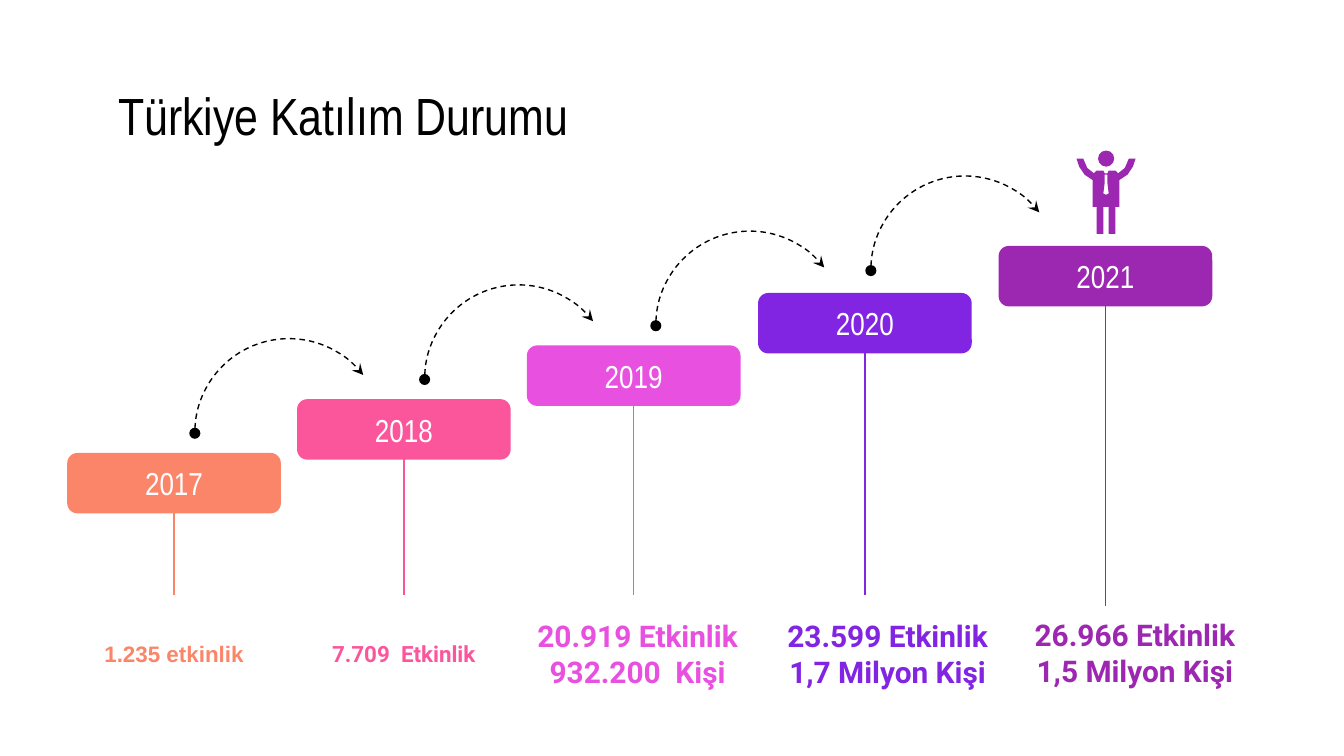
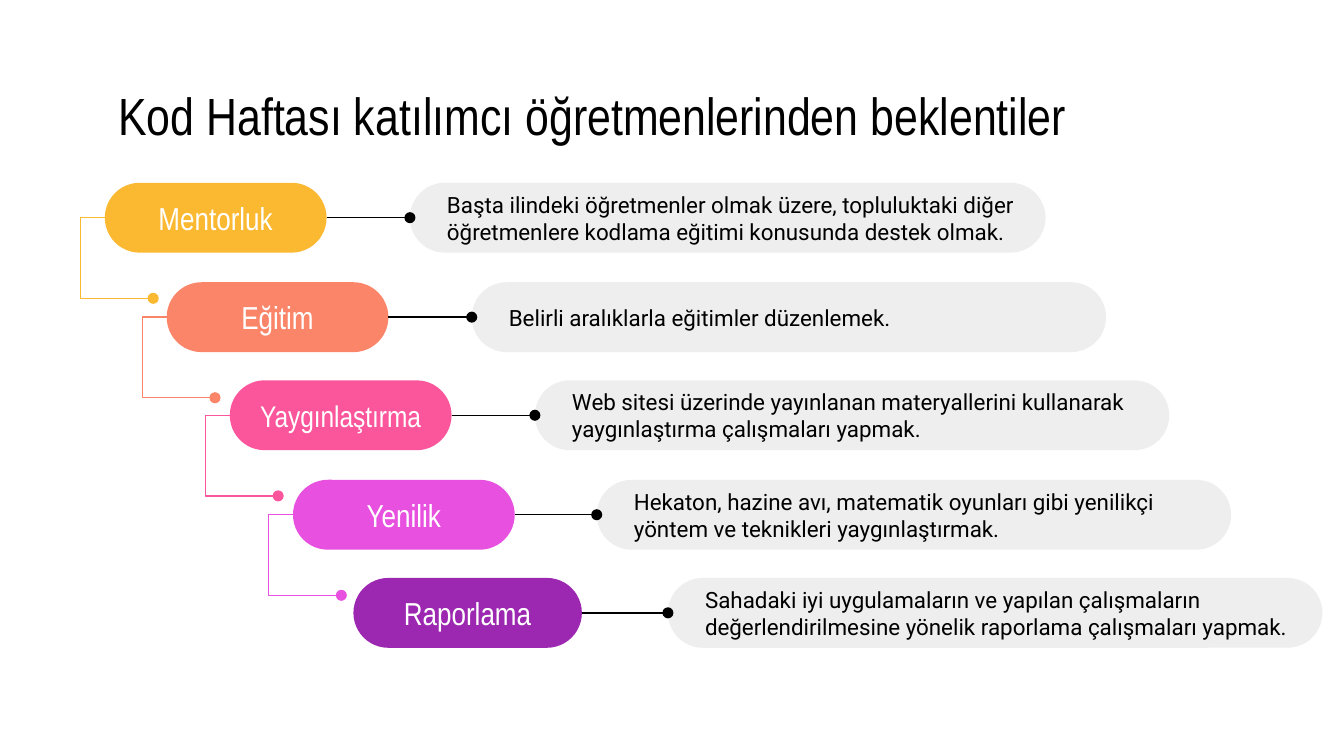
"""Build two slides: participation by year and what is expected of teachers."""
from lxml.etree import SubElement
from pptx import Presentation
from pptx.dml.color import RGBColor
from pptx.enum.dml import MSO_LINE
from pptx.enum.shapes import MSO_CONNECTOR, MSO_SHAPE
from pptx.enum.text import MSO_ANCHOR, MSO_AUTO_SIZE, PP_ALIGN
from pptx.oxml.ns import qn
from pptx.util import Pt

PX = 9144
BLACK = RGBColor(0x00, 0x00, 0x00)
WHITE = RGBColor(0xFF, 0xFF, 0xFF)
GREY = RGBColor(0xEE, 0xEE, 0xEE)
YELLOW = RGBColor(0xFB, 0xB8, 0x31)
CORAL = RGBColor(0xFB, 0x85, 0x69)
ROSE = RGBColor(0xFB, 0x56, 0x9C)
PINK = RGBColor(0xE8, 0x50, 0xE0)
VIOLET = RGBColor(0x82, 0x25, 0xE2)
PURPLE = RGBColor(0x9C, 0x27, 0xB0)
HEADING, BODY = "Arial Narrow", "Roboto"

YEARS_TITLE = "Türkiye Katılım Durumu"
YEARS = [
    {"year": "2017", "at": (50, 337), "color": CORAL, "stem": (CORAL, 443),
     "label": (50, 452, 159, 69), "text": ["1.235 etkinlik"], "font": ("Arial", 12)},
    {"year": "2018", "at": (221, 297), "color": ROSE, "stem": (ROSE, 443),
     "label": (221, 452, 159, 69), "text": ["7.709  Etkinlik"], "font": (BODY, 12)},
    {"year": "2019", "at": (392, 257), "color": PINK, "stem": (PINK, 443),
     "label": (386, 452, 177, 69), "text": ["20.919 Etkinlik", "932.200  Kişi"], "font": (BODY, 16)},
    {"year": "2020", "at": (564, 218), "color": VIOLET, "stem": (VIOLET, 443),
     "label": (564, 452, 193, 69), "text": ["23.599 Etkinlik 1,7 Milyon Kişi"], "font": (BODY, 16)},
    {"year": "2021", "at": (743, 183), "color": PURPLE, "stem": (VIOLET, 451),
     "label": (748, 451, 193, 69), "text": ["26.966 Etkinlik 1,5 Milyon Kişi"], "font": (BODY, 16)},
]
JUMPS = [(145, 252), (316, 212), (488, 172), (648, 131)]
YEAR_W, YEAR_H, JUMP_SIZE = 159, 45, 140

FIGURE_HEAD = (817, 112, 12, 12)
FIGURE_AXIS = 823
HALF_BODY = [(822, 129), (821, 127), (819, 127), (816, 127), (814, 129), (809, 125),
             (806, 118), (801, 118), (803, 124), (807, 130), (813, 134), (813, 154),
             (816, 154), (816, 174), (821, 174), (821, 154)]
HALF_TIE = [(822, 130), (822, 136), (821, 144), (823, 145)]

TASKS_TITLE = "Kod Haftası katılımcı öğretmenlerinden beklentiler"
TASKS = [
    ("Mentorluk", 17, YELLOW, (78, 165), (305, 473),
     "Başta ilindeki öğretmenler olmak üzere, topluluktaki diğer "
     "öğretmenlere kodlama eğitimi konusunda destek olmak."),
    ("Eğitim", 17, CORAL, (124, 165), (351, 472),
     "Belirli aralıklarla eğitimler düzenlemek."),
    ("Yaygınlaştırma", 16, ROSE, (171, 165), (398, 472),
     "Web sitesi üzerinde yayınlanan materyallerini kullanarak "
     "yaygınlaştırma çalışmaları yapmak."),
    ("Yenilik", 17, PINK, (218, 165), (444, 472),
     "Hekaton, hazine avı, matematik oyunları gibi yenilikçi "
     "yöntem ve teknikleri yaygınlaştırmak."),
    ("Raporlama", 17, PURPLE, (263, 170), (497, 487),
     "Sahadaki iyi uygulamaların ve yapılan çalışmaların "
     "değerlendirilmesine yönelik raporlama çalışmaları yapmak."),
]
TASK_TOP, TASK_STEP, TASK_H = 136, 73.6, 52


def px(*lengths):
    return [round(n * PX) for n in lengths]


def write(sp, lines, font, size, color, align=PP_ALIGN.CENTER, bold=False, left=10):
    tf = sp.text_frame
    tf.word_wrap = True
    tf.auto_size = MSO_AUTO_SIZE.NONE
    tf.vertical_anchor = MSO_ANCHOR.MIDDLE
    tf.margin_left, tf.margin_top, tf.margin_right, tf.margin_bottom = px(left, 10, 10, 10)
    for i, line in enumerate(lines):
        p = tf.add_paragraph() if i else tf.paragraphs[0]
        p.alignment = align
        r = p.add_run()
        r.text = line
        r.font.name, r.font.size, r.font.bold = font, Pt(size), bold
        r.font.color.rgb = color


def add_filled(s, kind, box, color, radius=None):
    sp = s.shapes.add_shape(kind, *px(*box))
    paint(sp, color)
    if radius is not None:
        sp.adjustments[0] = radius
    return sp


def paint(sp, color):
    sp.shadow.inherit = False
    sp.fill.solid()
    sp.fill.fore_color.rgb = color
    sp.line.fill.background()


def draw_line(sp, color, head=None, tail=None, dash=None):
    sp.line.color.rgb = color
    sp.line.width = Pt(0.75)
    if dash:
        sp.line.dash_style = dash
    ln = sp.element.spPr.get_or_add_ln()
    for tag, end in (("a:headEnd", head), ("a:tailEnd", tail)):
        if end:
            SubElement(ln, qn(tag)).set("type", end)


def add_straight(s, x1, y1, x2, y2, color, tail=None):
    line = s.shapes.add_connector(MSO_CONNECTOR.STRAIGHT, *px(x1, y1, x2, y2))
    draw_line(line, color, tail=tail)
    SubElement(line.element.spPr, qn("a:effectLst"))


def add_slide(prs, title):
    s = prs.slides.add_slide(prs.slide_layouts[5])
    sp = s.shapes.title
    sp.left, sp.top, sp.width, sp.height = px(78, 59, 845, 53)
    write(sp, [title], HEADING, 28, BLACK, PP_ALIGN.LEFT)
    return s


def add_jump(s, x, y):
    arc = s.shapes.add_shape(MSO_SHAPE.ARC, *px(x, y, JUMP_SIZE, JUMP_SIZE))
    arc.adjustments[0], arc.adjustments[1] = 107.8, 193.31
    arc.shadow.inherit = False
    arc.fill.background()
    draw_line(arc, BLACK, "oval", "stealth", MSO_LINE.DASH)


def mirrored(half):
    return half + [(2 * FIGURE_AXIS - x, y) for x, y in reversed(half)]


def add_figure(s):
    add_filled(s, MSO_SHAPE.OVAL, FIGURE_HEAD, PURPLE)
    body, tie = mirrored(HALF_BODY), mirrored(HALF_TIE)
    outline = s.shapes.build_freeform(*body[0], scale=PX)
    outline.add_line_segments(body[1:], close=True)
    outline.move_to(*tie[0])
    outline.add_line_segments(tie[1:], close=True)
    paint(outline.convert_to_shape(), PURPLE)


def add_elbow(s, x, y, color):
    elbow = s.shapes.build_freeform(x, y, scale=PX)
    elbow.add_line_segments([(x - 18, y), (x - 18, y + 60), (x + 36, y + 60)], close=False)
    sp = elbow.convert_to_shape()
    sp.shadow.inherit = False
    sp.fill.background()
    draw_line(sp, color, tail="oval")


def build_years(prs):
    s = add_slide(prs, YEARS_TITLE)
    for x, y in JUMPS:
        add_jump(s, x, y)
    add_figure(s)
    for item in YEARS:
        x, y = item["at"]
        stem_color, stem_end = item["stem"]
        middle = x + YEAR_W / 2
        add_straight(s, middle, y + 36, middle, stem_end, stem_color)
        box = add_filled(s, MSO_SHAPE.ROUNDED_RECTANGLE, (x, y, YEAR_W, YEAR_H), item["color"], 0.17)
        write(box, [item["year"]], HEADING, 17, WHITE)
        label = s.shapes.add_textbox(*px(*item["label"]))
        write(label, item["text"], *item["font"], item["color"], bold=True)


def build_tasks(prs):
    s = add_slide(prs, TASKS_TITLE)
    for i, (name, size, color, (x, w), (note_x, note_w), text) in enumerate(TASKS):
        y = round(TASK_TOP + i * TASK_STEP)
        middle = y + TASK_H // 2
        if i < len(TASKS) - 1:
            add_elbow(s, x, middle, color)
        pill = add_filled(s, MSO_SHAPE.ROUNDED_RECTANGLE, (x, y, w, TASK_H), color, 0.5)
        write(pill, [name], HEADING, size, WHITE)
        note = add_filled(s, MSO_SHAPE.ROUNDED_RECTANGLE, (note_x, y, note_w, TASK_H), GREY, 0.5)
        write(note, [text], BODY, 12, BLACK, PP_ALIGN.LEFT, left=20)
        add_straight(s, x + w, middle, note_x, middle, BLACK, tail="oval")


def main():
    prs = Presentation()
    prs.slide_width, prs.slide_height = px(1000, 562.5)
    build_years(prs)
    build_tasks(prs)
    prs.save("out.pptx")


if __name__ == "__main__":
    main()
